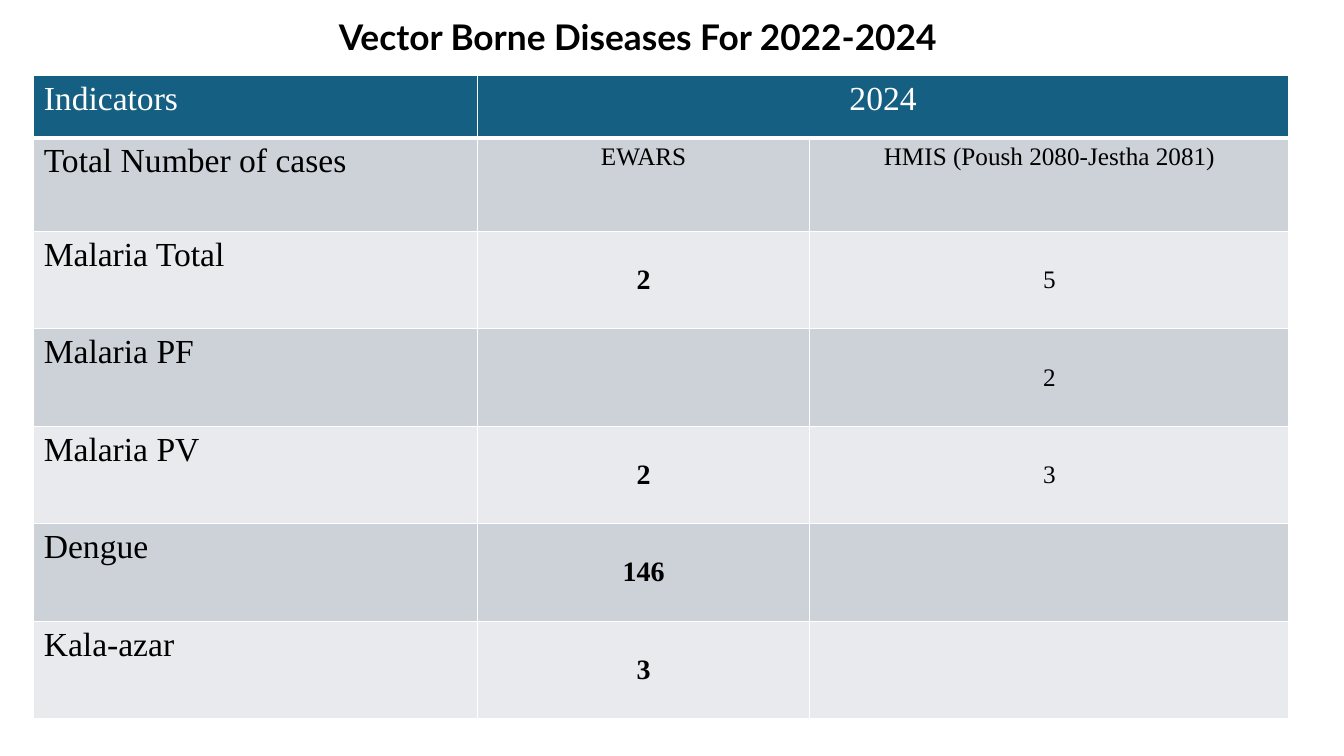
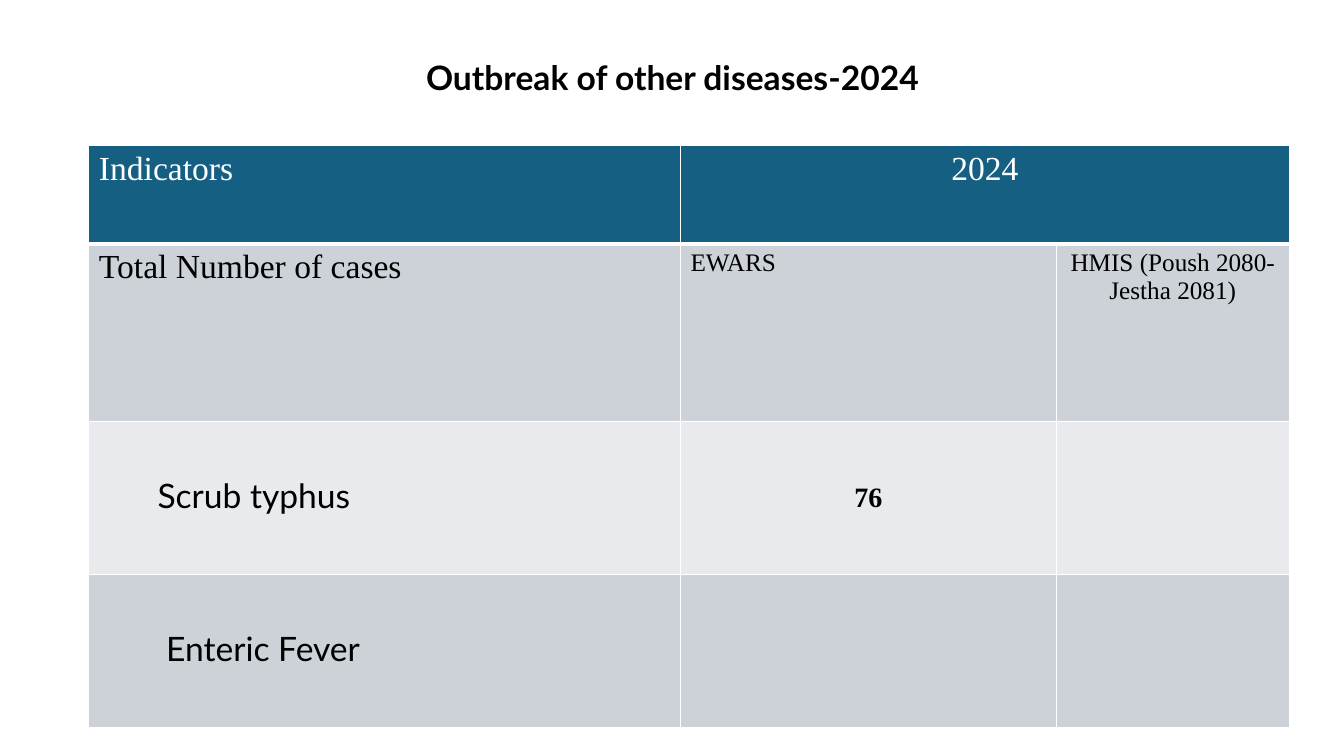
from lxml import etree
from pptx import Presentation
from pptx.dml.color import RGBColor
from pptx.enum.text import MSO_ANCHOR, PP_ALIGN
from pptx.oxml.ns import qn
from pptx.util import Cm, Pt

LEFT, CENTER = PP_ALIGN.LEFT, PP_ALIGN.CENTER
TOP, MIDDLE = MSO_ANCHOR.TOP, MSO_ANCHOR.MIDDLE

HEADING_FONT, TABLE_FONT = "Lato", "Times New Roman"
BLACK, WHITE = "000000", "FFFFFF"
HEADER_FILL, BANDS = "156082", ("CCD2D8", "E8EAED")

HEADER = ["Indicators", "2024", ""]
SUBHEADER = ["Total Number of cases", "EWARS", "HMIS (Poush 2080-Jestha 2081)"]


def color(hex_value):
    return RGBColor.from_string(hex_value)


def write(frame, text, size=18, font=TABLE_FONT, fill=BLACK, bold=False,
          align=LEFT, spacing=None):
    paragraph = frame.paragraphs[0]
    paragraph.alignment = align
    if spacing:
        paragraph.line_spacing = spacing
    run = paragraph.add_run()
    run.text = text
    run.font.size = Pt(size)
    run.font.name = font
    run.font.bold = bold
    run.font.color.rgb = color(fill)


def add_title(slide, box, text, size):
    frame = slide.shapes.add_textbox(*map(Cm, box)).text_frame
    frame.word_wrap = True
    frame.vertical_anchor = MIDDLE
    write(frame, text, size, HEADING_FONT, bold=True, align=CENTER, spacing=0.9)


def style_cell(cell, fill, bottom=1):
    """White rules on all four sides, then the fill."""
    properties = cell._tc.get_or_add_tcPr()
    for side, width in (("L", 1), ("R", 1), ("T", 1), ("B", bottom)):
        rule = etree.SubElement(properties, qn(f"a:ln{side}"), w=str(Pt(width)))
        solid = etree.SubElement(rule, qn("a:solidFill"))
        etree.SubElement(solid, qn("a:srgbClr"), val=WHITE)
    cell.fill.solid()
    cell.fill.fore_color.rgb = color(fill)


def add_case_table(slide, box, widths, heights, diseases, label_style,
                   label_anchor=TOP, label_indent=None, ewars_align=CENTER):
    """Fill the box with indicators; widths and heights are shares of it."""
    left, top, width, height = box
    rows = [HEADER, SUBHEADER] + diseases
    table = slide.shapes.add_table(len(rows), len(HEADER), *map(Cm, box)).table
    for column, share in zip(table.columns, widths):
        column.width = Cm(width * share / sum(widths))
    for row, share in zip(table.rows, heights):
        row.height = Cm(height * share / sum(heights))

    for r, row in enumerate(rows):
        for c, text in enumerate(row):
            cell = table.cell(r, c)
            if r == 0:
                style_cell(cell, HEADER_FILL, bottom=3)
                look = {"size": 24, "fill": WHITE, "align": CENTER if c else LEFT}
            else:
                style_cell(cell, BANDS[(r - 1) % 2])
                if r == 1:
                    look = {"size": 18 if c else 24,
                            "align": (LEFT, ewars_align, CENTER)[c]}
                elif c == 0:
                    look = label_style
                    cell.vertical_anchor = label_anchor
                    if label_indent:
                        cell.margin_left = Cm(label_indent)
                else:
                    # EWARS counts stand out from HMIS counts
                    look = {"size": 20 if c == 1 else 18, "bold": c == 1,
                            "align": CENTER}
                    cell.vertical_anchor = MIDDLE
            if text:
                write(cell.text_frame, text, **look)
    table.cell(0, 1).merge(table.cell(0, 2))


def vector_borne_slide(slide):
    add_title(slide, (1.47, 0.43, 29.21, 1.1),
              "Vector Borne Diseases For 2022-2024", 25.2)
    add_case_table(
        slide, (0.85, 1.91, 31.63, 16.2),
        widths=(11.18, 8.38, 12.07), heights=[1.57, 2.36] + [2.46] * 5,
        diseases=[["Malaria Total", "2", "5"],
                  ["Malaria PF", "", "2"],
                  ["Malaria PV", "2", "3"],
                  ["Dengue", "146", ""],
                  ["Kala-azar", "3", ""]],
        label_style={"size": 24})


def other_outbreaks_slide(slide):
    add_title(slide, (2.34, 1.02, 29.21, 1.96),
              "Outbreak of other diseases-2024", 24)
    add_case_table(
        slide, (2.24, 3.67, 30.25, 14.66),
        widths=(14.91, 9.47, 5.87), heights=(2.48, 4.47, 3.86, 3.86),
        diseases=[["Scrub typhus", "76", ""],
                  [" Enteric Fever", "", ""]],
        label_style={"size": 24, "font": HEADING_FONT, "spacing": 0.9},
        label_anchor=MIDDLE, label_indent=1.73, ewars_align=LEFT)


def main():
    deck = Presentation()
    deck.slide_width, deck.slide_height = Cm(33.87), Cm(19.05)
    blank = deck.slide_layouts[6]
    for build in (vector_borne_slide, other_outbreaks_slide):
        build(deck.slides.add_slide(blank))
    deck.save("out.pptx")


if __name__ == "__main__":
    main()
